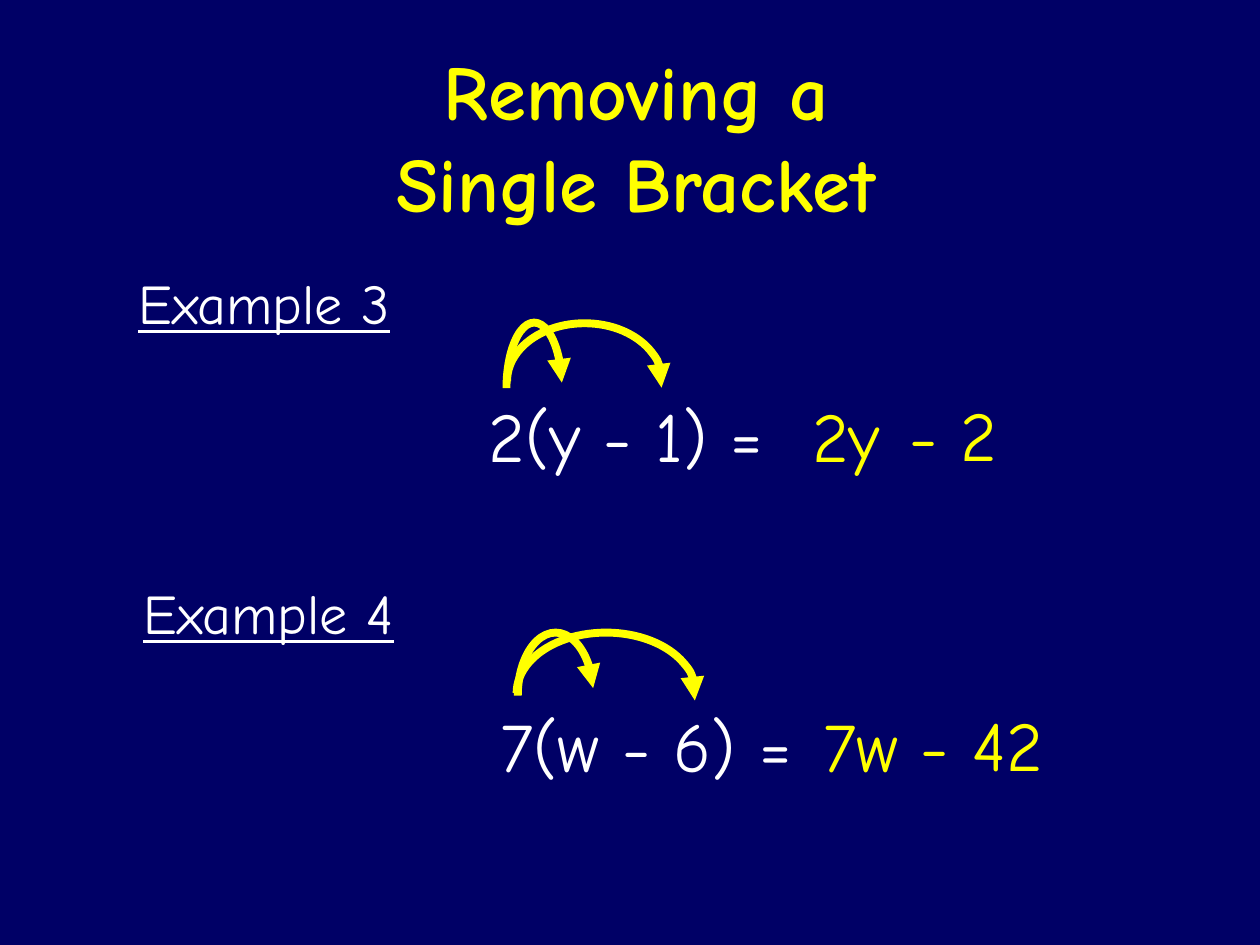
from lxml.etree import SubElement
from pptx import Presentation
from pptx.dml.color import RGBColor
from pptx.enum.shapes import MSO_SHAPE
from pptx.enum.text import MSO_ANCHOR, MSO_AUTO_SIZE, PP_ALIGN
from pptx.oxml.ns import qn
from pptx.util import Inches, Pt

COLORS = {"navy": "000066", "white": "FFFFFF", "yellow": "FFFF00"}
FONT = "Comic Neue"


def write(p, text, size=40, color="yellow", bold=False, underline=False):
    r = p.add_run()
    r.text = text
    f = r.font
    f.name, f.size, f.bold, f.underline = FONT, Pt(size), bold, underline
    f.color.rgb = RGBColor.from_string(COLORS[color])


prs = Presentation()
prs.slide_width, prs.slide_height = Inches(10), Inches(7.5)
s = prs.slides.add_slide(prs.slide_layouts[5])
s.background.fill.solid()
s.background.fill.fore_color.rgb = RGBColor.from_string(COLORS["navy"])

title = s.shapes.title
title.left, title.top = Inches(2.05), Inches(0.29)
title.width, title.height = Inches(6), Inches(1.57)
tf = title.text_frame
tf.vertical_anchor = MSO_ANCHOR.BOTTOM
tf.auto_size = MSO_AUTO_SIZE.NONE
for i, line in enumerate(["Removing a", "Single Bracket"]):
    p = tf.add_paragraph() if i else tf.paragraphs[0]
    p.alignment = PP_ALIGN.CENTER
    write(p, line, size=44, bold=True)

heading = {"size": 32, "color": "white", "underline": True}
question = {"color": "white"}
texts = [
    ("Example 3", 1, 2.08, 2.34, 0.64, heading),
    ("2(y - 1) =", 3.78, 3.07, 2.5, 0.77, question),
    ("2y", 6.35, 3.07, 0.83, 0.77, {}),
    ("- 2", 7.12, 3.06, 0.94, 0.77, {}),
    ("Example 4", 1.04, 4.54, 2.34, 0.64, heading),
    ("7(w - 6) =", 3.87, 5.53, 2.68, 0.77, question),
    ("7w", 6.44, 5.53, 0.92, 0.77, {}),
    ("- 42", 7.21, 5.52, 1.28, 0.77, {}),
]
for text, x, y, w, h, style in texts:
    sp = s.shapes.add_textbox(Inches(x), Inches(y), Inches(w), Inches(h))
    tf = sp.text_frame
    tf.word_wrap = False
    tf.auto_size = MSO_AUTO_SIZE.SHAPE_TO_FIT_TEXT
    write(tf.paragraphs[0], text, **style)

# Arrows from the multiplier to each term: frame before rotation, end angle
arcs = [
    (3.72, 2.86, 1.04, 0.44, 78.69),
    (4.18, 2.41, 0.92, 1.23, 94.77),
    (3.91, 5.22, 1, 0.6, 78.69),
    (4.33, 4.79, 0.96, 1.42, 94.77),
]
for x, y, w, h, end in arcs:
    sp = s.shapes.add_shape(MSO_SHAPE.ARC, Inches(x), Inches(y), Inches(w), Inches(h))
    sp.rotation = 270
    # Angles are stored in 60000ths of a degree, adjustments in 100000ths
    sp.adjustments[0], sp.adjustments[1] = 270 * 0.6, end * 0.6
    sp.shadow.inherit = False
    sp.fill.background()
    sp.line.color.rgb = RGBColor.from_string(COLORS["yellow"])
    sp.line.width = Pt(4.5)
    SubElement(sp.line._get_or_add_ln(), qn("a:tailEnd"), type="triangle")

prs.save("out.pptx")
